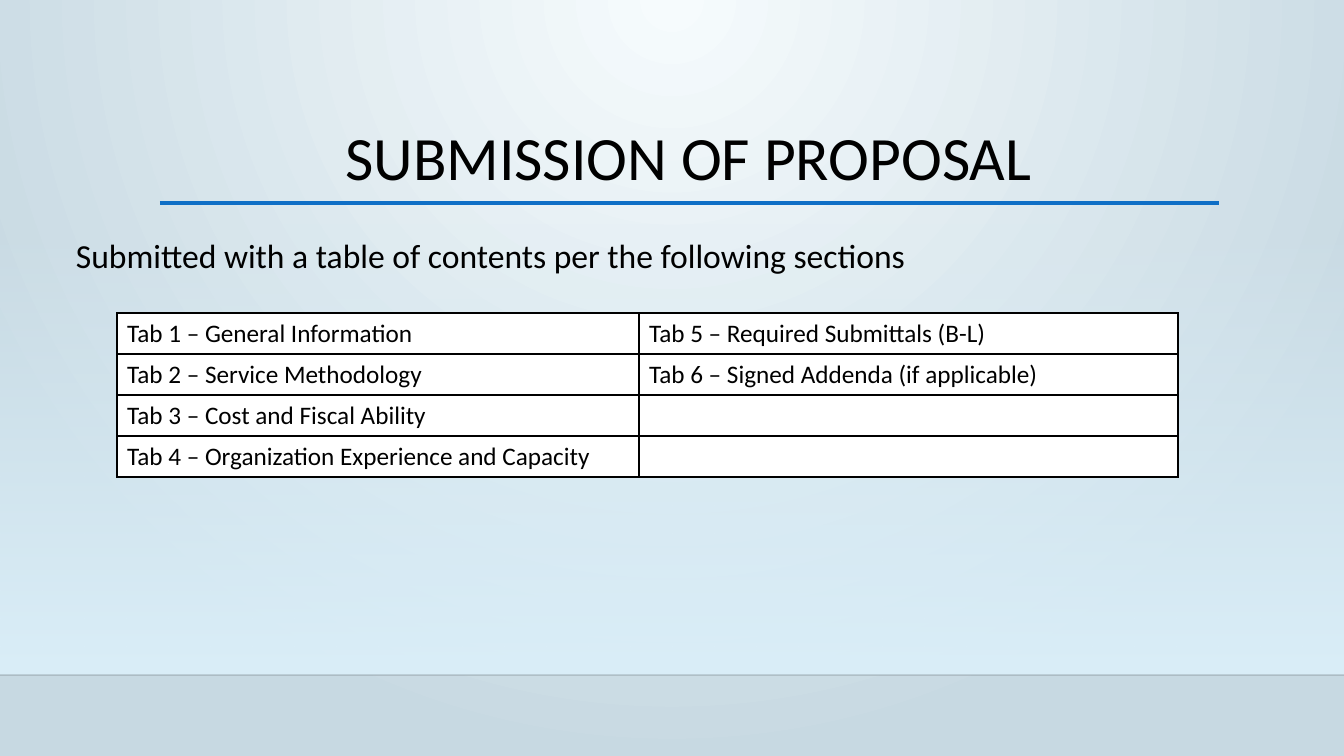
from lxml.etree import SubElement
from pptx import Presentation
from pptx.dml.color import RGBColor
from pptx.enum.shapes import MSO_CONNECTOR, MSO_SHAPE
from pptx.enum.text import MSO_ANCHOR, MSO_AUTO_SIZE, PP_ALIGN
from pptx.oxml import parse_xml
from pptx.oxml.ns import nsdecls, qn
from pptx.util import Pt

TITLE = "SUBMISSION OF PROPOSAL"
INTRO = "Submitted with a table of contents per the following sections"
TABS = [
    ("Tab 1 – General Information", "Tab 5 – Required Submittals (B-L)"),
    ("Tab 2 – Service Methodology", "Tab 6 – Signed Addenda (if applicable)"),
    ("Tab 3 – Cost and Fiscal Ability", ""),
    ("Tab 4 – Organization Experience and Capacity", ""),
]
COL_W = (522, 539)
ROW_H = 41
W, H = 1344, 756
HORIZON = 675
RADIAL = '<a:path path="circle"><a:fillToRect l="43000" r="43000" b="100000"/></a:path>'
DOWNWARD = '<a:lin ang="5400000" scaled="0"/>'


def px(n):
    return round(n * 914400 / 100.8)


def box(*lengths):
    return [px(n) for n in lengths]


def rgb(color):
    return RGBColor.from_string(color)


def add_text(tf, text, size=18, color="000000", align=PP_ALIGN.LEFT, spacing=None):
    p = tf.paragraphs[0]
    p.alignment = align
    p.line_spacing = spacing
    r = p.add_run()
    r.text = text
    r.font.name = "Calibri"
    r.font.size = Pt(size)
    r.font.color.rgb = rgb(color)


def set_gradient(fill, props, stops, direction):
    fill.solid()
    gs = "".join(
        f'<a:gs pos="{pos * 1000}"><a:srgbClr val="{color}">'
        f'<a:alpha val="{alpha * 1000}"/></a:srgbClr></a:gs>'
        for pos, color, alpha in stops
    )
    grad = parse_xml(
        f'<a:gradFill {nsdecls("a")} rotWithShape="1">'
        f"<a:gsLst>{gs}</a:gsLst>{direction}</a:gradFill>"
    )
    props.replace(props.find(qn("a:solidFill")), grad)


def add_line(x1, x2, y, color, width, alpha=100):
    ln = s.shapes.add_connector(MSO_CONNECTOR.STRAIGHT, *box(x1, y, x2, y))
    ln.line.color.rgb = rgb(color)
    ln.line.width = Pt(width)
    if alpha < 100:
        clr = next(ln.element.spPr.iter(qn("a:srgbClr")))
        SubElement(clr, qn("a:alpha"), val=str(alpha * 1000))
    SubElement(ln.element.spPr, qn("a:effectLst"))


def set_borders(cell, color="000000", width=1):
    tcPr = cell._tc.get_or_add_tcPr()
    for i, side in enumerate(("lnL", "lnR", "lnT", "lnB")):
        tcPr.insert(i, parse_xml(
            f'<a:{side} {nsdecls("a")} w="{Pt(width)}"><a:solidFill>'
            f'<a:srgbClr val="{color}"/></a:solidFill></a:{side}>'
        ))


prs = Presentation()
prs.slide_width, prs.slide_height = box(W, H)
s = prs.slides.add_slide(prs.slide_layouts[5])

bg = s.background.fill
bg.solid()
set_gradient(bg, next(s.element.iter(qn("p:bgPr"))),
             [(0, "F6FBFD", 100), (100, "C7D9E2", 100)], RADIAL)

glow = s.shapes.add_shape(MSO_SHAPE.RECTANGLE, *box(0, 223, W, HORIZON - 223))
glow.shadow.inherit = False
glow.line.fill.background()
set_gradient(glow.fill, glow.element.spPr,
             [(0, "DBEFF9", 0), (100, "DBEFF9", 100)], DOWNWARD)

add_line(0, W, HORIZON, "000001", 1, alpha=20)
add_line(160, 1219, 203, "0F6FC6", 2.5)

title = s.shapes.title
title.left, title.top, title.width, title.height = box(160, 122, 1058, 116)
tf = title.text_frame
tf.word_wrap = True
tf.auto_size = MSO_AUTO_SIZE.NONE
tf.vertical_anchor = MSO_ANCHOR.TOP
add_text(tf, TITLE, size=44, align=PP_ALIGN.CENTER, spacing=0.9)

tbl = s.shapes.add_table(
    len(TABS), len(COL_W), *box(117, 313, sum(COL_W), ROW_H * len(TABS))
).table
tbl.first_row = tbl.horz_banding = False
for col, width in zip(tbl.columns, COL_W):
    col.width = px(width)
for i, row in enumerate(TABS):
    tbl.rows[i].height = px(ROW_H)
    for j, text in enumerate(row):
        cell = tbl.cell(i, j)
        cell.vertical_anchor = MSO_ANCHOR.MIDDLE
        cell.fill.solid()
        cell.fill.fore_color.rgb = rgb("FFFFFF")
        set_borders(cell)
        if text:
            add_text(cell.text_frame, text)

tf = s.shapes.add_textbox(*box(66, 230, 1252, 50)).text_frame
tf.word_wrap = True
tf.auto_size = MSO_AUTO_SIZE.SHAPE_TO_FIT_TEXT
add_text(tf, INTRO, size=24)

prs.save("out.pptx")
